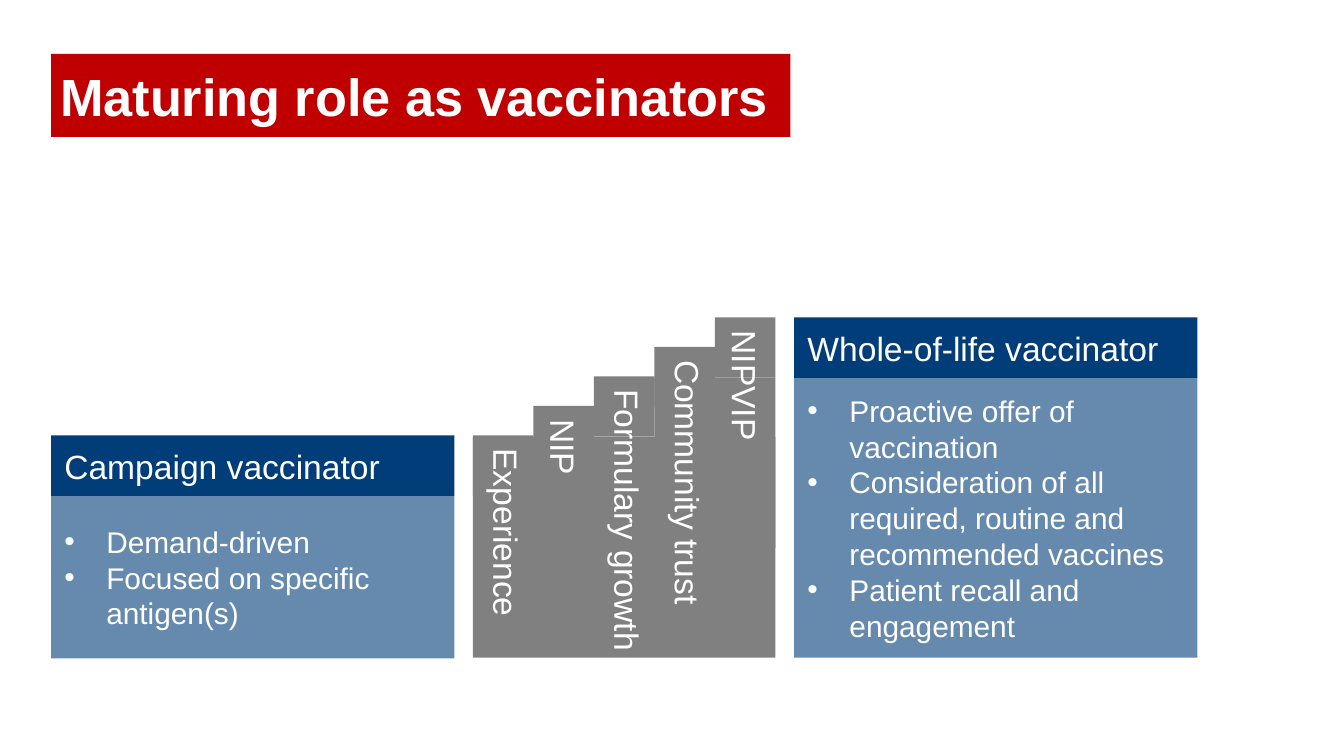
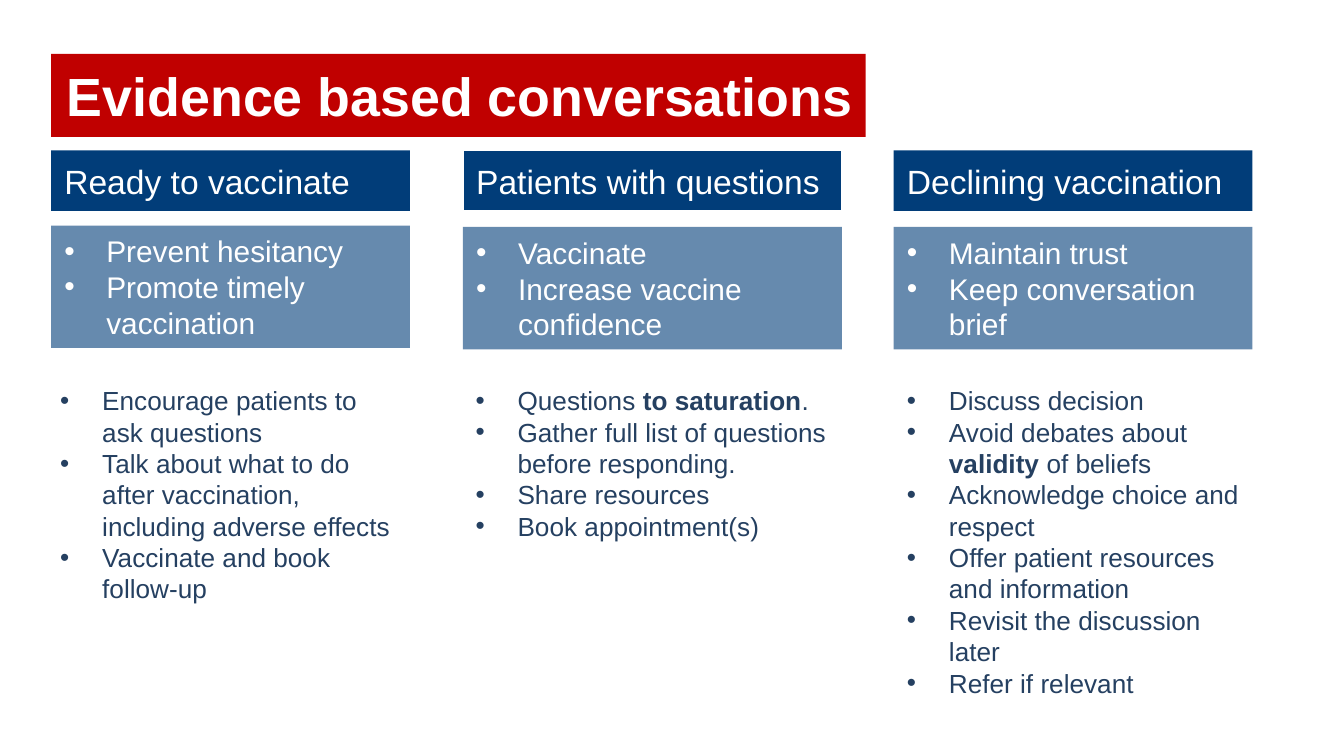
from dataclasses import dataclass
from lxml.etree import SubElement
from pptx import Presentation
from pptx.dml.color import RGBColor
from pptx.enum.shapes import MSO_SHAPE
from pptx.enum.text import MSO_ANCHOR, MSO_AUTO_SIZE, PP_ALIGN
from pptx.oxml.ns import qn
from pptx.util import Pt


@dataclass(frozen=True)
class Theme:
    """Colours, font, type sizes and shared measures in points."""
    red: str = "C00000"
    navy: str = "013D79"
    grey: str = "808080"
    ink: str = "254061"
    white: str = "FFFFFF"
    font: str = "Arial"
    head: float = 18
    goal: float = 16
    note: float = 14
    left: float = 27.4
    bar: float = 32.4
    hang: float = 22.5
    tint: int = 60


def adjust(target, values):
    """Set each attribute named in values."""
    for name, value in values.items():
        setattr(target, name, value)


class Deck:
    """Holds the theme and the current slide."""

    def __init__(self, theme):
        """Start an empty deck."""
        self.theme = theme
        self.prs = Presentation()
        adjust(self.prs, {"slide_width": Pt(720), "slide_height": Pt(405)})
        self.slide = None

    def page(self):
        """Add a blank slide."""
        self.slide = self.prs.slides.add_slide(self.prs.slide_layouts[6])

    def block(self, box, fill, kind=MSO_SHAPE.RECTANGLE, alpha=None, line=None):
        """Add a filled shape."""
        shape = self.slide.shapes.add_shape(kind, *map(Pt, box))
        shape.shadow.inherit = False
        shape.fill.solid()
        shape.fill.fore_color.rgb = RGBColor.from_string(fill)
        if alpha:
            tone = shape.fill._xPr.find(".//" + qn("a:srgbClr"))
            SubElement(tone, qn("a:alpha"), val=str(alpha * 1000))
        if line:
            shape.line.color.rgb = RGBColor.from_string(line)
            shape.line.width = Pt(0.75)
        else:
            shape.line.fill.background()
        return shape

    def words(self, shape, lines, size, color, bold=False, dots=False, **frame):
        """Fill a shape with paragraphs; stars mark bold words."""
        body = shape.text_frame
        adjust(body, {"word_wrap": True, "vertical_anchor": MSO_ANCHOR.MIDDLE, **frame})
        look = {"name": self.theme.font, "size": Pt(size)}
        for row, line in enumerate(lines):
            para = body.add_paragraph() if row else body.paragraphs[0]
            para.alignment = PP_ALIGN.LEFT
            if dots:
                self.dot(para)
            for turn, part in enumerate(line.split("*")):
                run = para.add_run()
                run.text = part
                adjust(run.font, {**look, "bold": bold or turn % 2 == 1})
                run.font.color.rgb = RGBColor.from_string(color)

    def dot(self, para):
        """Give a paragraph a hanging bullet."""
        props = para._p.get_or_add_pPr()
        hang = Pt(self.theme.hang)
        for name, value in {"marL": hang, "indent": -hang}.items():
            props.set(name, str(value))
        SubElement(props, qn("a:buFont"), typeface=self.theme.font)
        SubElement(props, qn("a:buChar"), char="•")

    def label(self, box, lines, size, color, turn=0, **style):
        """Add a text box, turned if asked."""
        shape = self.slide.shapes.add_textbox(*map(Pt, box))
        shape.rotation = turn
        self.words(shape, lines, size, color, **style)

    def title(self, text, size, width, box):
        """Add the red title band and its text."""
        look = self.theme
        self.block((look.left, 28.8, width, 44.6), look.red)
        self.label(box, [text], size, look.white, bold=True)

    def plate(self, box, lines, size, alpha=None, line=None, dots=False):
        """Add a navy plate with white text."""
        look = self.theme
        shape = self.block(box, look.navy, MSO_SHAPE.PENTAGON, alpha, line)
        shape.adjustments[0] = 0
        self.words(shape, lines, size, look.white, dots=dots)

    def card(self, left, top, width, head, goals, drop, tall, line=None):
        """Add a heading plate and a paler plate of goals."""
        look = self.theme
        self.plate((left, top, width, look.bar), [head], look.head, line=line)
        self.plate((left, top + drop, width, tall), goals, look.goal,
                   look.tint, dots=True)

    def stairs(self, left, top, rise, steps):
        """Add rising grey steps with turned labels."""
        look, side, high = self.theme, self.theme.bar, 28.8
        count = len(steps)
        spots = [(left + i * side, top + (count - 1 - i) * rise) for i in range(count)]
        for x, y in spots:
            self.block((x, y, side, side), look.grey)
        self.block((left, 234, count * side, 118.4), look.grey)
        self.block((spots[3][0], 202.3, 2 * side, 91.4), look.grey)
        for (x, y), (name, long, nudge) in zip(spots, steps):
            mid = x + side / 2 + nudge
            box = (mid - long / 2, y + (long - high) / 2, long, high)
            self.label(box, [name], look.head, look.white, 90, word_wrap=False,
                       vertical_anchor=MSO_ANCHOR.TOP,
                       auto_size=MSO_AUTO_SIZE.SHAPE_TO_FIT_TEXT)


def roles(deck):
    """Build the slide on the vaccinator role."""
    deck.page()
    deck.title("Maturing role as vaccinators", 28, 396, (25.2, 22.3, 410.4, 57.6))
    drop = deck.theme.bar
    deck.card(deck.theme.left, 233.3, 216, "Campaign vaccinator",
              ["Demand-driven", "Focused on specific antigen(s)"], drop, 87)
    deck.card(425.5, 170, 216, "Whole-of-life vaccinator",
              ["Proactive offer of vaccination",
               "Consideration of all required, routine and recommended vaccines",
               "Patient recall and engagement"], drop, 150)
    deck.stairs(253.4, 170, 15.8, [
        ("Experience", 105.1, 1.8), ("NIP", 44.6, 0),
        ("Formulary growth", 156.2, 1.8), ("Community trust", 146.9, 1.8),
        ("NIPVIP", 74.2, 0)])


def talks(deck):
    """Build the slide on patient conversations."""
    deck.page()
    look = deck.theme
    deck.title("Evidence based conversations", 28.8, 436.3, (28.8, 29.5, 450, 43.2))
    columns = [
        (look.left, 192.2, 40.3, None, "Ready to vaccinate",
         ["Prevent hesitancy", "Promote timely vaccination"],
         (25.2, 194.4),
         ["Encourage patients to ask questions",
          "Talk about what to do after vaccination, including adverse effects",
          "Vaccinate and book follow-up"]),
        (248, 203, 41, look.white, "Patients with questions",
         ["Vaccinate", "Increase vaccine confidence"],
         (247.7, 216),
         ["Questions *to saturation*.",
          "Gather full list of questions before responding.",
          "Share resources", "Book appointment(s)"]),
        (478.8, 192.2, 41, None, "Declining vaccination",
         ["Maintain trust", "Keep conversation brief"],
         (478.8, 194.4),
         ["Discuss decision", "Avoid debates about *validity *of beliefs",
          "Acknowledge choice and respect",
          "Offer patient resources and information",
          "Revisit the discussion later", "Refer if relevant"])]
    for left, width, drop, line, head, goals, (start, span), notes in columns:
        deck.card(left, 80.6, width, head, goals, drop, 65.5, line)
        deck.label((start, 202.5, span, 177), notes, look.note, look.ink,
                   dots=True, vertical_anchor=MSO_ANCHOR.TOP)


def main():
    """Build and save the deck."""
    deck = Deck(Theme())
    roles(deck)
    talks(deck)
    deck.prs.save("out.pptx")


if __name__ == "__main__":
    main()
